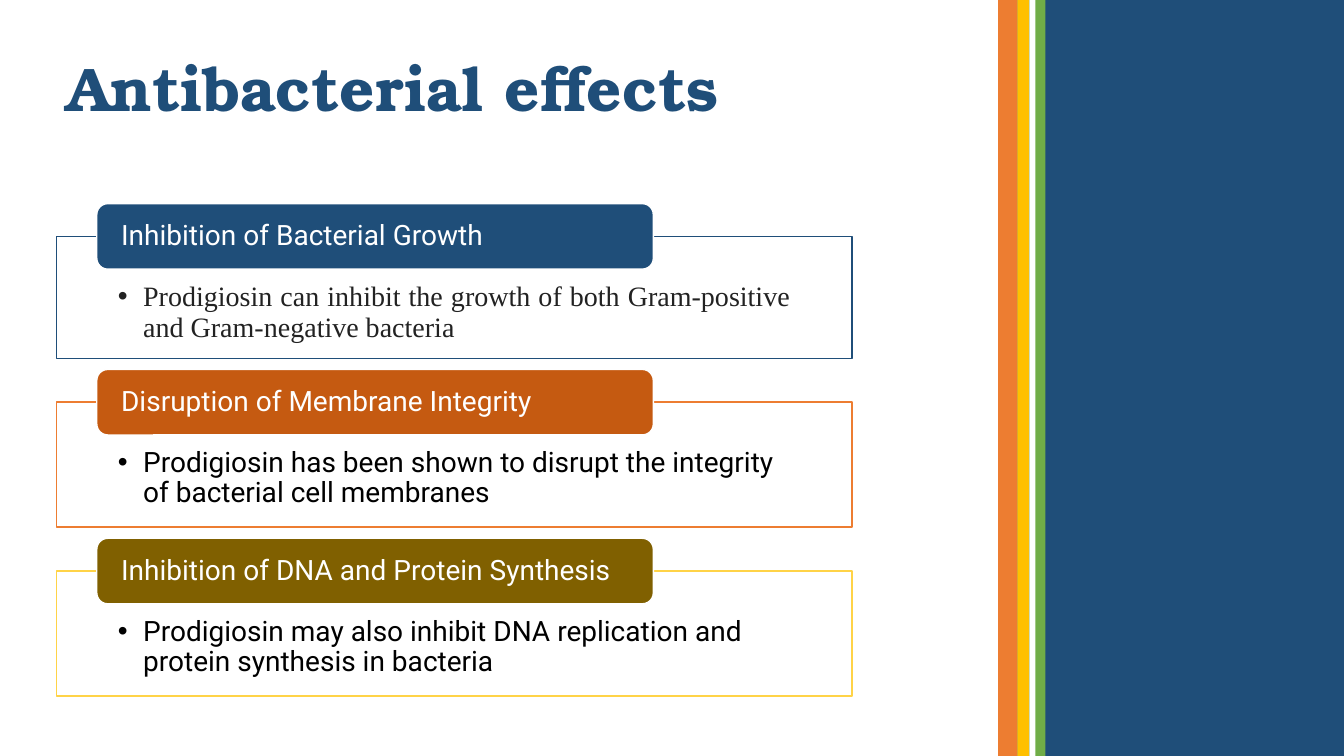
from lxml.etree import SubElement
from pptx import Presentation
from pptx.dml.color import RGBColor
from pptx.enum.shapes import MSO_SHAPE
from pptx.enum.text import MSO_ANCHOR, PP_ALIGN
from pptx.oxml.ns import qn
from pptx.util import Inches, Pt

COLORS = {
    "navy": "1F4E79", "orange": "ED7D31", "gold": "FFC000", "green": "70AD47",
    "white": "FFFFFF", "rust": "C55A11", "olive": "806000", "yellow": "FFD347",
    "ink": "222222", "black": "000000",
}
TITLE = "Antibacterial effects"
STRIPES = [
    (10.09, 3.24, "navy"), (9.9, 0.19, "orange"), (10.09, 0.12, "gold"),
    (10.21, 0.16, "green"), (10.21, 0.06, "white"),
]
EFFECTS = [
    ("Inhibition of Bacterial Growth",
     "Prodigiosin can inhibit the growth of both Gram-positive and Gram-negative bacteria",
     "navy", "navy", 1.21, "Times New Roman", "ink", PP_ALIGN.JUSTIFY),
    ("Disruption of Membrane Integrity",
     "Prodigiosin has been shown to disrupt the integrity of bacterial cell membranes",
     "rust", "orange", 1.24, "Roboto", "black", PP_ALIGN.LEFT),
    ("Inhibition of DNA and Protein Synthesis",
     "Prodigiosin may also inhibit DNA replication and protein synthesis in bacteria",
     "olive", "yellow", 1.24, "Roboto", "black", PP_ALIGN.LEFT),
]
LEFT, BOX_W = 0.56, 7.89
TAB_LEFT, TAB_W, TAB_H = 0.96, 5.52, 0.65
FIRST_TOP, GAP = 2.02, 0.11


def rgb(name):
    return RGBColor.from_string(COLORS[name])


def add_block(s, kind, at, fill, line=None):
    sp = s.shapes.add_shape(kind, *map(Inches, at))
    sp.shadow.inherit = False
    sp.fill.solid()
    sp.fill.fore_color.rgb = rgb(fill)
    if line:
        sp.line.color.rgb = rgb(line)
        sp.line.width = Pt(1)
    else:
        sp.line.fill.background()
    return sp


def write(sp, text, size, font, color, anchor, insets, align=PP_ALIGN.LEFT,
          bold=False, after=0, bullet=False):
    tf = sp.text_frame
    tf.word_wrap = True
    tf.vertical_anchor = anchor
    tf.margin_left, tf.margin_top, tf.margin_right, tf.margin_bottom = map(Inches, insets)
    p = tf.paragraphs[0]
    p.alignment = align
    p.line_spacing = 0.9
    p.space_after = Pt(after)
    if bullet:
        pPr = p._p.get_or_add_pPr()
        pPr.set("marL", str(Inches(0.25)))
        pPr.set("indent", str(Inches(-0.25)))
        SubElement(pPr, qn("a:buFont")).set("typeface", "Arial")
        SubElement(pPr, qn("a:buChar")).set("char", "•")
    r = p.add_run()
    r.text = text
    r.font.name = font
    r.font.size = Pt(size)
    r.font.bold = bold
    r.font.color.rgb = rgb(color)


def main():
    """Build the antibacterial effects slide."""
    prs = Presentation()
    prs.slide_width, prs.slide_height = Inches(13.33), Inches(7.5)
    s = prs.slides.add_slide(prs.slide_layouts[6])

    for x, w, color in STRIPES:
        add_block(s, MSO_SHAPE.RECTANGLE, (x, 0, w, 7.5), color)

    title = s.shapes.add_textbox(*map(Inches, (LEFT, 0.12, 8.95, 1.17)))
    write(title, TITLE, 44, "TeX Gyre Bonum", "navy", MSO_ANCHOR.BOTTOM,
          (0.1, 0.05, 0.1, 0.05), bold=True)

    top = FIRST_TOP
    for heading, detail, fill, line, box_h, font, color, align in EFFECTS:
        box_top = top + TAB_H / 2
        box = add_block(s, MSO_SHAPE.RECTANGLE, (LEFT, box_top, BOX_W, box_h), "white", line)
        white = box.fill._xPr.find(qn("a:solidFill"))[0]
        SubElement(white, qn("a:alpha")).set("val", "90000")
        write(box, detail, 20, font, color, MSO_ANCHOR.TOP, (0.61, 0.46, 0.61, 0.16),
              align, after=3, bullet=True)
        tab = add_block(s, MSO_SHAPE.ROUNDED_RECTANGLE, (TAB_LEFT, top, TAB_W, TAB_H),
                        fill, "white")
        write(tab, heading, 20, "Roboto", "white", MSO_ANCHOR.MIDDLE, (0.21, 0, 0.21, 0),
              after=7)
        top = box_top + box_h + GAP

    prs.save("out.pptx")


if __name__ == "__main__":
    main()
